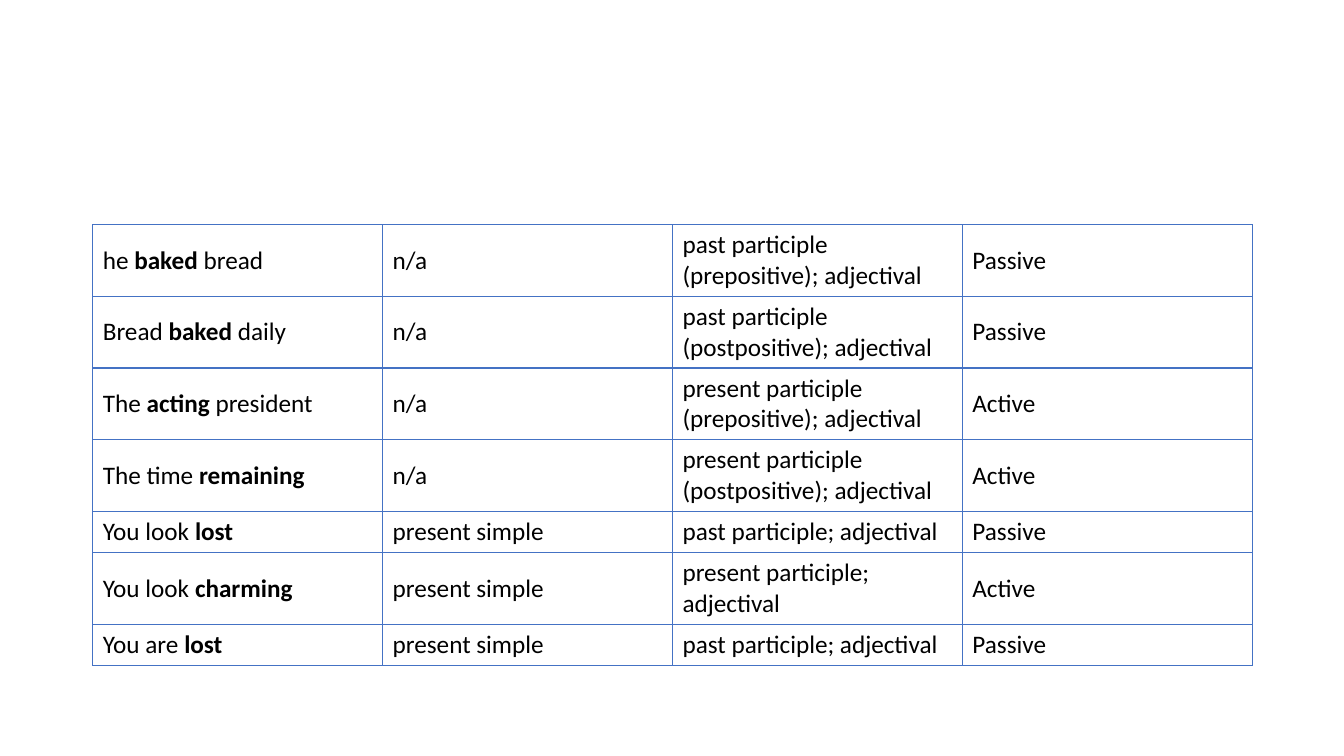
import pptx
import pptx.dml.color
import pptx.enum.text
import pptx.oxml.ns
import pptx.util
from lxml import etree

Inches = pptx.util.Inches
BLACK = pptx.dml.color.RGBColor(0x00, 0x00, 0x00)
BLUE = pptx.dml.color.RGBColor(0x44, 0x72, 0xC4)

ROWS = [
    (("he ", "baked", " bread"), "n/a", "past participle (prepositive); adjectival", "Passive"),
    (("Bread ", "baked", " daily"), "n/a", "past participle (postpositive); adjectival", "Passive"),
    (("The ", "acting", " president"), "n/a", "present participle (prepositive); adjectival", "Active"),
    (("The time ", "remaining"), "n/a", "present participle (postpositive); adjectival", "Active"),
    (("You look ", "lost"), "present simple", "past participle; adjectival", "Passive"),
    (("You look ", "charming"), "present simple", "present participle; adjectival", "Active"),
    (("You are ", "lost"), "present simple", "past participle; adjectival", "Passive"),
]
LEFT, TOP, WIDTH = 0.92, 2.23, 11.5
TALL, SHORT = 0.71, 0.41
WRAP = 27


def border(cell):
    props = cell._tc.get_or_add_tcPr()
    for side in ("lnL", "lnR", "lnT", "lnB"):
        line = etree.SubElement(props, pptx.oxml.ns.qn("a:" + side), w=str(pptx.util.Pt(1)))
        fill = etree.SubElement(line, pptx.oxml.ns.qn("a:solidFill"))
        etree.SubElement(fill, pptx.oxml.ns.qn("a:srgbClr"), val=str(BLUE))


def write(cell, parts):
    para = cell.text_frame.paragraphs[0]
    for index, part in enumerate(parts):
        run = para.add_run()
        run.text = part
        run.font.name = "Calibri"
        run.font.size = pptx.util.Pt(18)
        run.font.bold = index == 1
        run.font.color.rgb = BLACK
    cell.vertical_anchor = pptx.enum.text.MSO_ANCHOR.MIDDLE


def main():
    deck = pptx.Presentation()
    deck.slide_width, deck.slide_height = Inches(13.33), Inches(7.5)
    slide = deck.slides.add_slide(deck.slide_layouts[6])
    highs = [TALL if len(row[2]) > WRAP else SHORT for row in ROWS]
    frame = slide.shapes.add_table(len(ROWS), len(ROWS[0]), Inches(LEFT), Inches(TOP),
                                   Inches(WIDTH), Inches(sum(highs)))
    table = frame.table
    table.first_row = table.horz_banding = False
    for y, (row, high) in enumerate(zip(ROWS, highs)):
        table.rows[y].height = Inches(high)
        for x, entry in enumerate(row):
            cell = table.cell(y, x)
            border(cell)
            cell.fill.background()
            write(cell, (entry,) if isinstance(entry, str) else entry)
    deck.save("out.pptx")


if __name__ == "__main__":
    main()
